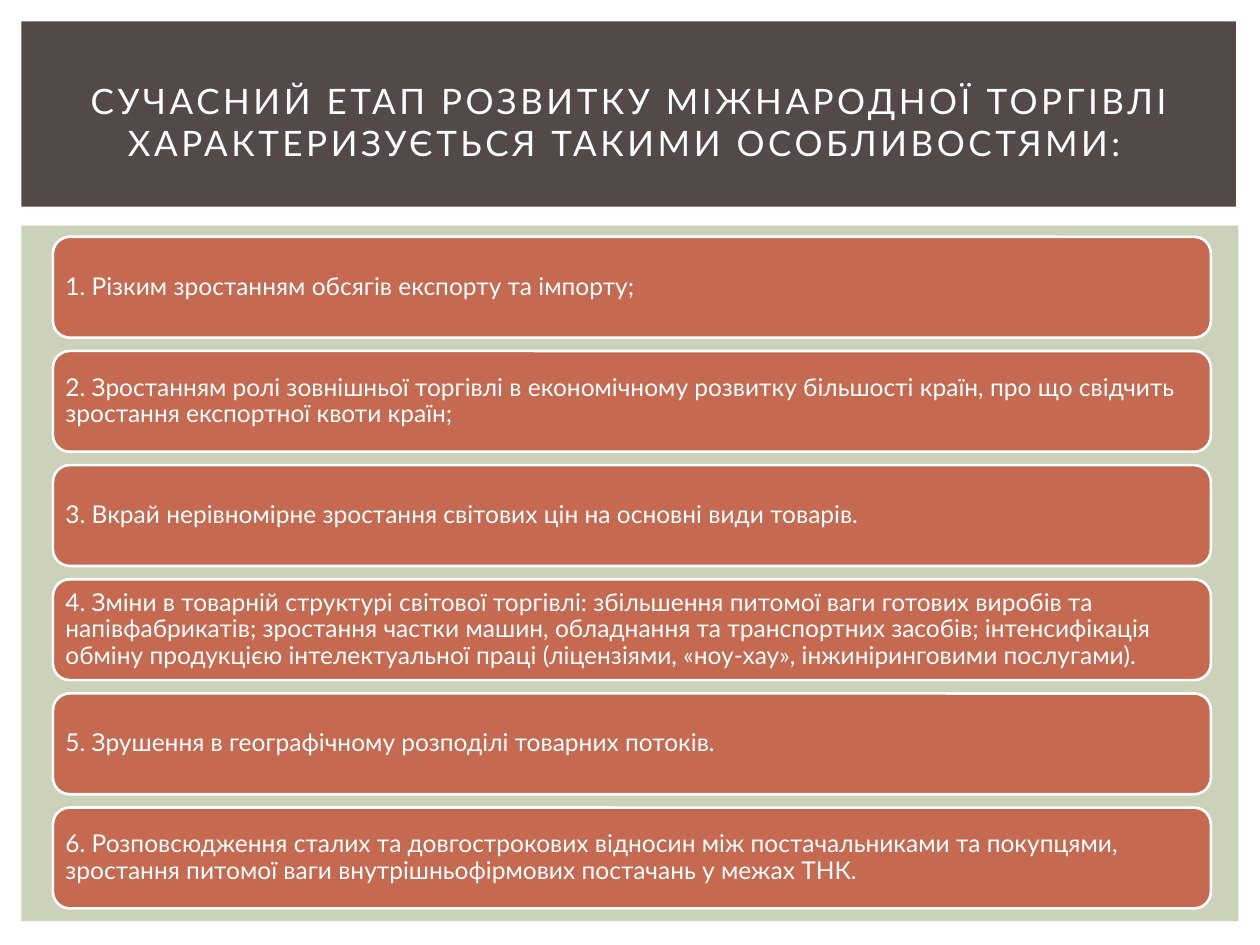
"""Build a slide listing the features of modern international trade."""
import pptx
import pptx.dml.color
import pptx.enum.shapes
import pptx.enum.text
import pptx.util
from pptx.util import Inches


def color(hex_string):
    return pptx.dml.color.RGBColor.from_string(hex_string)


def add_box(slide, kind, left, top, width, height, fill):
    shape = slide.shapes.add_shape(
        kind, Inches(left), Inches(top), Inches(width), Inches(height)
    )
    shape.shadow.inherit = False
    shape.fill.solid()
    shape.fill.fore_color.rgb = color(fill)
    shape.line.fill.background()
    return shape


FEATURES = [
    "1. Різким зростанням обсягів експорту та імпорту;",
    "2. Зростанням ролі зовнішньої торгівлі в економічному розвитку більшості країн, "
    "про що свідчить зростання експортної квоти країн;",
    "3. Вкрай нерівномірне зростання світових цін на основні види товарів.",
    "4. Зміни в товарній структурі світової торгівлі: збільшення питомої ваги готових "
    "виробів та напівфабрикатів; зростання частки машин, обладнання та транспортних "
    "засобів; інтенсифікація обміну продукцією інтелектуальної праці (ліцензіями, "
    "«ноу-хау», інжиніринговими послугами).",
    "5. Зрушення в географічному розподілі товарних потоків.",
    "6. Розповсюдження сталих та довгострокових відносин між постачальниками та "
    "покупцями, зростання питомої ваги внутрішньофірмових постачань у межах ТНК.",
]
FIRST_TOP, LAST_TOP = 1.88, 6.41
PITCH = (LAST_TOP - FIRST_TOP) / (len(FEATURES) - 1)
RECTANGLE = pptx.enum.shapes.MSO_SHAPE.RECTANGLE
ROUNDED = pptx.enum.shapes.MSO_SHAPE.ROUNDED_RECTANGLE

presentation = pptx.Presentation()
presentation.slide_width = Inches(10)
presentation.slide_height = Inches(7.5)
slide = presentation.slides.add_slide(presentation.slide_layouts[5])

add_box(slide, RECTANGLE, 0.17, 1.79, 9.66, 5.52, "CCD1B9")
add_box(slide, RECTANGLE, 0.17, 0.17, 9.64, 1.47, "534949")

for index, feature in enumerate(FEATURES):
    card = add_box(slide, ROUNDED, 0.42, FIRST_TOP + index * PITCH, 9.19, 0.8, "C66951")
    card.line.color.rgb = color("FFFFFF")
    card.line.width = pptx.util.Pt(1.5)
    frame = card.text_frame
    frame.text = feature
    frame.word_wrap = True
    frame.vertical_anchor = pptx.enum.text.MSO_ANCHOR.MIDDLE
    frame.margin_left = frame.margin_right = Inches(0.06)
    frame.margin_top = frame.margin_bottom = Inches(0.06)
    paragraph = frame.paragraphs[0]
    paragraph.alignment = pptx.enum.text.PP_ALIGN.LEFT
    paragraph.line_spacing = 0.9
    font = paragraph.runs[0].font
    font.name = "Lato"
    font.size = pptx.util.Pt(14)
    font.color.rgb = color("FFFFFF")

title = slide.shapes.title
title.left, title.top = Inches(0.42), Inches(0.39)
title.width, title.height = Inches(9.17), Inches(1.15)
title.text_frame.text = (
    "СУЧАСНИЙ ЕТАП РОЗВИТКУ МІЖНАРОДНОЇ ТОРГІВЛІ "
    "ХАРАКТЕРИЗУЄТЬСЯ ТАКИМИ ОСОБЛИВОСТЯМИ: "
)
title.text_frame.word_wrap = True
title.text_frame.vertical_anchor = pptx.enum.text.MSO_ANCHOR.MIDDLE
heading = title.text_frame.paragraphs[0]
heading.alignment = pptx.enum.text.PP_ALIGN.CENTER
heading_run = heading.runs[0]
heading_run.font.name = "Lato"
heading_run.font.size = pptx.util.Pt(20)
heading_run.font.color.rgb = color("FFFFFF")
heading_run.font._element.set("spc", "200")
title.element.getparent().append(title.element)

presentation.save("out.pptx")
